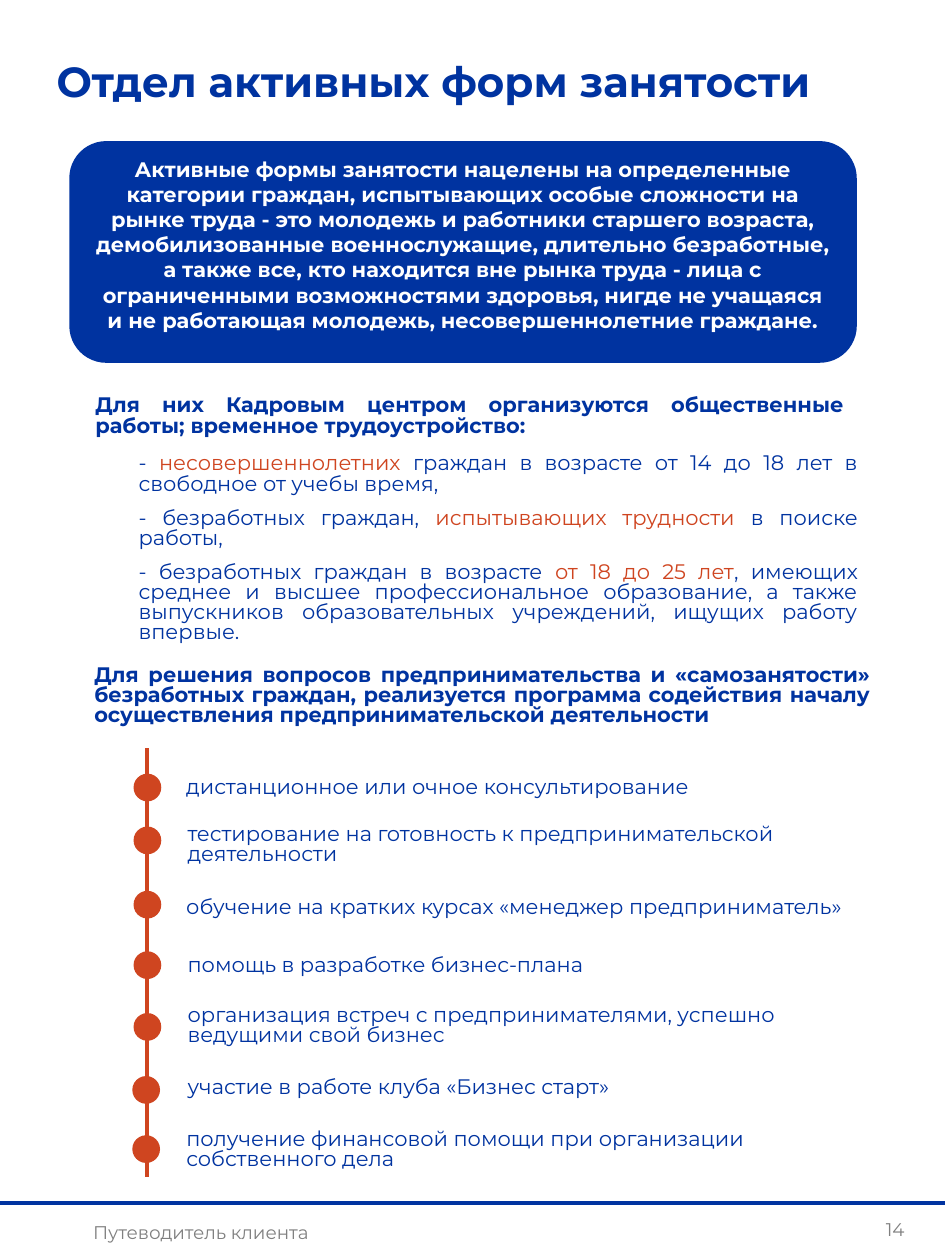
from dataclasses import dataclass

from lxml import etree
from pptx import Presentation, util as u
from pptx.dml.color import RGBColor
from pptx.enum import shapes, text
from pptx.oxml.ns import qn


@dataclass(frozen=True)
class Theme:
    """Colours, font and type sizes of the guide."""
    blue: str = "0033A0"
    orange: str = "CF4520"
    white: str = "FFFFFF"
    grey: str = "808080"
    font: str = "Montserrat"
    title: float = 24
    body: float = 12
    footer: float = 10.5
    rule: float = 2.25


class GuidePage:
    """Draws styled elements on one slide over a grid of 75 columns by 100 rows."""
    COLUMNS, ROWS = 75, 100

    def __init__(self, presentation, theme):
        self.width, self.height = presentation.slide_width, presentation.slide_height
        self.theme = theme
        self.slide = presentation.slides.add_slide(presentation.slide_layouts[1])

    def place(self, *lengths):
        """Turns alternating columns and rows into slide lengths."""
        units = (self.width / self.COLUMNS, self.height / self.ROWS)
        return [u.Emu(round(length * units[i % 2])) for i, length in enumerate(lengths)]

    def apply(self, target, **values):
        """Sets every attribute in values on the target."""
        for name, value in values.items():
            setattr(target, name, value)

    def set_text(self, shape, paragraphs, size, color, bold=False, **layout):
        """Fills a shape with paragraphs, colouring the parts between asterisks."""
        frame = shape.text_frame
        self.apply(frame, word_wrap=True, vertical_anchor=text.MSO_ANCHOR.TOP,
                   auto_size=text.MSO_AUTO_SIZE.SHAPE_TO_FIT_TEXT)
        for index, content in enumerate(paragraphs):
            paragraph = frame.add_paragraph() if index else frame.paragraphs[0]
            self.apply(paragraph, **{"alignment": text.PP_ALIGN.LEFT, **layout})
            for part, words in enumerate(content.split("*")):
                run = paragraph.add_run()
                run.text = words
                self.apply(run.font, name=self.theme.font, size=u.Pt(size), bold=bold)
                run.font.color.rgb = RGBColor.from_string(self.theme.orange if part % 2 else color)

    def placeholder(self, index, box, paragraphs, size, bold=False, **layout):
        """Moves a template placeholder and fills it without bullets."""
        shape = self.slide.placeholders[index]
        self.apply(shape, **dict(zip(("left", "top", "width", "height"), self.place(*box))))
        self.set_text(shape, paragraphs, size, self.theme.blue, bold, space_before=u.Pt(0), **layout)
        for paragraph in shape.text_frame.paragraphs:
            properties = paragraph._p.get_or_add_pPr()
            properties.set("marL", "0")
            properties.set("indent", "0")
            etree.SubElement(properties, qn("a:buNone"))

    def label(self, box, content, size, color, **style):
        """Adds a text box with one paragraph."""
        shape = self.slide.shapes.add_textbox(*self.place(*box))
        self.set_text(shape, [content], size, color, **style)

    def block(self, kind, box, color):
        """Adds a flat filled shape."""
        shape = self.slide.shapes.add_shape(kind, *self.place(*box))
        shape.shadow.inherit = False
        shape.fill.solid()
        shape.fill.fore_color.rgb = RGBColor.from_string(color)
        shape.line.fill.background()

    def rule(self, ends, color):
        """Adds a straight line without a shadow."""
        line = self.slide.shapes.add_connector(shapes.MSO_CONNECTOR.STRAIGHT, *self.place(*ends))
        line.line.width = u.Pt(self.theme.rule)
        line.line.color.rgb = RGBColor.from_string(color)
        etree.SubElement(line._element.spPr, qn("a:effectLst"))

    def step(self, dot, box, content):
        """Adds a timeline dot and the text beside it."""
        self.block(shapes.MSO_SHAPE.OVAL, (*dot, 2.2, 2.2), self.theme.orange)
        self.label(box, content, self.theme.body, self.theme.blue, line_spacing=0.8)


TITLE = "Отдел активных форм занятости"
INTRO = (
    "Активные формы занятости нацелены на определенные категории граждан, испытывающих особые "
    "сложности на рынке труда - это молодежь и работники старшего возраста, демобилизованные "
    "военнослужащие, длительно безработные, а также все, кто находится вне рынка труда - лица с "
    "ограниченными возможностями здоровья, нигде не учащаяся и не работающая молодежь, "
    "несовершеннолетние граждане."
)
GROUPS = [
    "- *несовершеннолетних* граждан в возрасте от 14 до 18 лет в свободное от учебы время,",
    "- безработных граждан, *испытывающих трудности *в поиске работы,",
    "- безработных граждан в возрасте *от 18 до 25 лет*, имеющих среднее и высшее "
    "профессиональное образование, а также выпускников образовательных учреждений, "
    "ищущих работу впервые.",
]
HEADINGS = [
    ((6.6, 31, 61.4, 4.3),
     "Для них Кадровым центром организуются общественные работы; временное трудоустройство:"),
    ((6.5, 52.4, 63.6, 5.9),
     "Для решения вопросов предпринимательства и «самозанятости» безработных граждан, "
     "реализуется программа содействия началу осуществления предпринимательской деятельности"),
]
STEPS = [
    ((10.6, 61.4), (13.8, 61.3, 47, 2.7), "дистанционное или очное консультирование"),
    ((10.6, 65.6), (13.9, 65, 55.1, 4.3),
     "тестирование на готовность к предпринимательской деятельности"),
    ((10.6, 70.7), (13.8, 70.8, 56.3, 2.6),
     "обучение на кратких курсах «менеджер предприниматель»"),
    ((10.6, 75.5), (13.9, 75.4, 40.8, 2.6), "помощь в разработке бизнес-плана"),
    ((10.6, 80.4), (13.9, 79.4, 55.1, 4.3),
     "организация встреч с предпринимателями, успешно ведущими свой бизнес"),
    ((10.5, 85.4), (13.9, 85.1, 40.8, 2.7), "участие в работе клуба «Бизнес старт»"),
    ((10.5, 90.1), (13.8, 89.2, 54.2, 4.3),
     "получение финансовой помощи при организации собственного дела"),
]
FOOTERS = [((-6.4, 96.4, 44.7, 2.8), "Путеводитель клиента"), ((68.8, 96.2, 4.5, 2.8), "14")]


def main():
    """Builds the page and saves it."""
    presentation = Presentation()
    presentation.slide_width, presentation.slide_height = u.Inches(7.5), u.Inches(10)
    theme = Theme()
    page = GuidePage(presentation, theme)
    center = {"alignment": text.PP_ALIGN.CENTER}
    justified = {"alignment": text.PP_ALIGN.JUSTIFY, "line_spacing": 0.8, "space_after": u.Pt(8)}

    page.placeholder(0, (3.5, 4.7, 68.7, 4.3), [TITLE], theme.title, bold=True, line_spacing=0.8)
    page.placeholder(1, (10, 35.6, 59.1, 16.2), GROUPS, theme.body, **justified)
    page.block(shapes.MSO_SHAPE.ROUNDED_RECTANGLE, (5.5, 11.2, 62.5, 17.6), theme.blue)
    page.label((6.6, 11.9, 60.3, 15.1), INTRO, theme.body, theme.white, bold=True, **center)
    for box, content in HEADINGS:
        page.label(box, content, theme.body, theme.blue, bold=True, **justified)
    page.rule((11.7, 59.4, 11.7, 93.4), theme.orange)
    for dot, box, content in STEPS:
        page.step(dot, box, content)
    page.rule((0, 95.5, page.COLUMNS, 95.5), theme.blue)
    for box, content in FOOTERS:
        page.label(box, content, theme.footer, theme.grey, **center)
    presentation.save("out.pptx")


if __name__ == "__main__":
    main()
